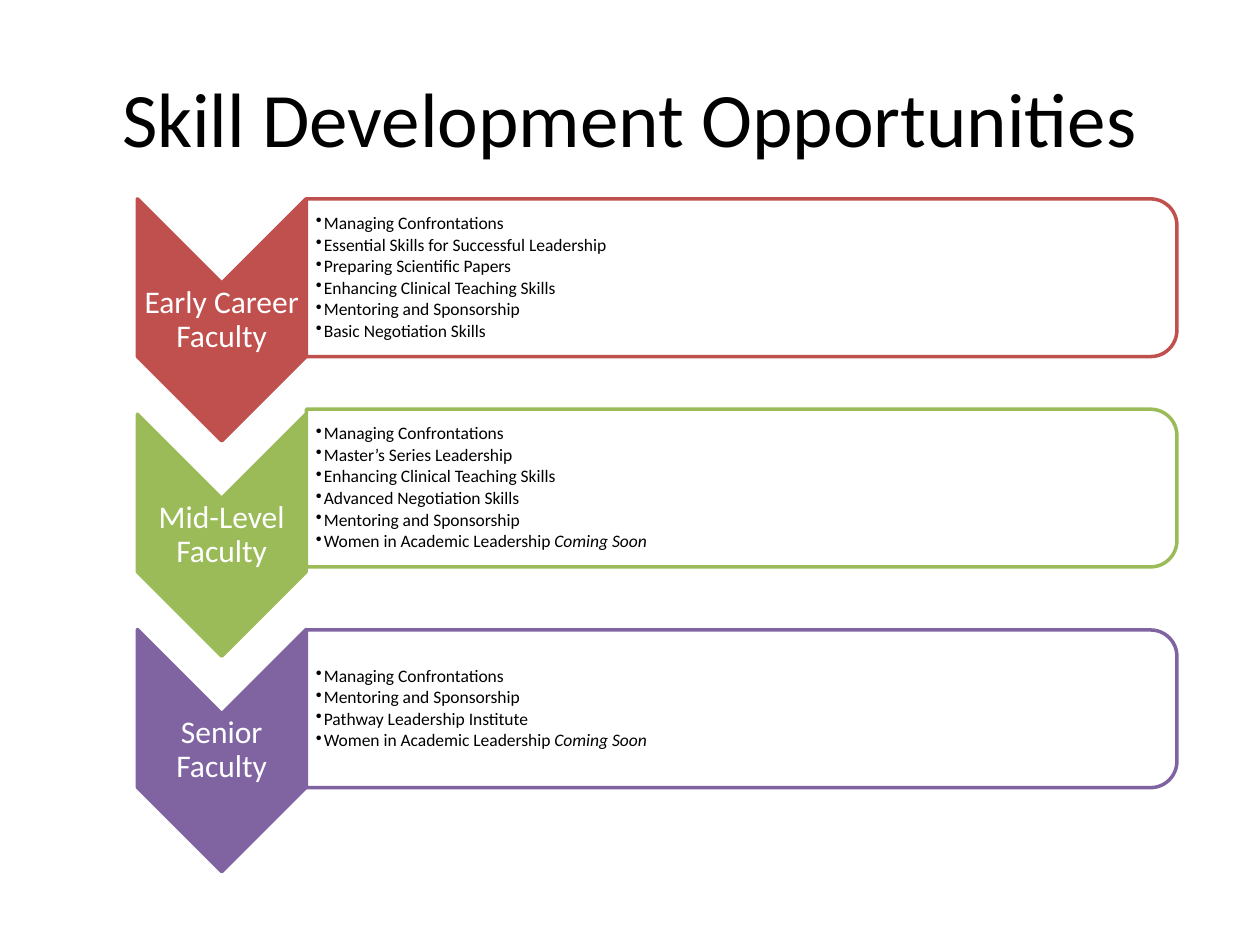
from lxml import etree
from pptx import Presentation
from pptx import util as u
from pptx.dml.color import RGBColor
from pptx.enum import shapes, text
from pptx.oxml.ns import qn

COLORS = {"early": "C0504D", "mid": "9BBB59", "senior": "8064A2",
          "panel": "FFFFFF", "label": "FFFFFF", "ink": "000000"}

SOON = "Coming Soon"
ACADEMIC = "Women in Academic Leadership "
# colour key, label, panel centre (cm), courses
STAGES = [
    ("early", "Early Career Faculty", 5.6,
     ["Managing Confrontations", "Essential Skills for Successful Leadership",
      "Preparing Scientific Papers", "Enhancing Clinical Teaching Skills",
      "Mentoring and Sponsorship", "Basic Negotiation Skills"]),
    ("mid", "Mid-Level Faculty", 9.84,
     ["Managing Confrontations", "Master’s Series Leadership",
      "Enhancing Clinical Teaching Skills", "Advanced Negotiation Skills",
      "Mentoring and Sponsorship", (ACADEMIC, SOON)]),
    ("senior", "Senior Faculty", 14.29,
     ["Managing Confrontations", "Mentoring and Sponsorship",
      "Pathway Leadership Institute", (ACADEMIC, SOON)]),
]
CHEVRON_X, CHEVRON_Y, CHEVRON_PITCH = 4.47, 6.45, 4.34
PANEL_X = 14.95


class SkillSlide:
    font = "Calibri"

    def __init__(self, deck):
        self.slide = deck.slides.add_slide(deck.slide_layouts[5])

    def color(self, key):
        return RGBColor.from_string(COLORS[key])

    def run(self, paragraph, words, size, color="ink", italic=None):
        run = paragraph.add_run()
        run.text = words
        run.font.name, run.font.size = self.font, u.Pt(size)
        run.font.color.rgb = self.color(color)
        run.font.italic = italic

    def title(self, words):
        heading = self.slide.shapes.title
        heading.left, heading.top = u.Cm(1.27), u.Cm(0.76)
        heading.width, heading.height = u.Cm(22.86), u.Cm(3.18)
        paragraph = heading.text_frame.paragraphs[0]
        paragraph.alignment = text.PP_ALIGN.CENTER
        self.run(paragraph, words, 44)

    def turned(self, preset, center, size, fill, line, opacity=100):
        """Add a preset turned a quarter clockwise about its centre."""
        (x, y), (width, height) = center, size
        shape = self.slide.shapes.add_shape(
            preset, u.Cm(x - width / 2), u.Cm(y - height / 2), u.Cm(width), u.Cm(height))
        shape.rotation = 90
        shape.shadow.inherit = False
        shape.fill.solid()
        shape.fill.fore_color.rgb = self.color(fill)
        if opacity < 100:
            tint = shape.fill._xPr.find(qn("a:solidFill"))[0]
            etree.SubElement(tint, qn("a:alpha"), val=str(opacity * 1000))
        shape.line.color.rgb = self.color(line)
        shape.line.width = u.Pt(2)

    def frame(self, left, middle, width, height, inset=0.03):
        box = self.slide.shapes.add_textbox(
            u.Cm(left), u.Cm(middle - height / 2), u.Cm(width), u.Cm(height))
        frame = box.text_frame
        frame.word_wrap = True
        frame.vertical_anchor = text.MSO_ANCHOR.MIDDLE
        frame.margin_left = u.Cm(inset)
        frame.margin_top = frame.margin_right = frame.margin_bottom = u.Cm(0.03)
        return frame

    def chevron(self, stage, label, middle):
        self.turned(shapes.MSO_SHAPE.CHEVRON, (CHEVRON_X, middle), (4.88, 3.4), stage, stage)
        paragraph = self.frame(CHEVRON_X - 1.7, middle, 3.4, 1.45).paragraphs[0]
        paragraph.alignment = text.PP_ALIGN.CENTER
        paragraph.line_spacing = 0.9
        self.run(paragraph, label, 18, "label")

    def panel(self, stage, courses, middle):
        self.turned(shapes.MSO_SHAPE.ROUND_2_SAME_RECTANGLE, (PANEL_X, middle),
                    (3.18, 17.55), "panel", stage, opacity=90)
        frame = self.frame(6.17, middle, 17.4, 2.84, inset=0.2)
        for index, course in enumerate(courses):
            paragraph = frame.add_paragraph() if index else frame.paragraphs[0]
            self.bullet(paragraph)
            name, note = course if isinstance(course, tuple) else (course, None)
            self.run(paragraph, name, 10)
            if note:
                self.run(paragraph, note, 10, italic=True)

    def bullet(self, paragraph):
        properties = paragraph._p.get_or_add_pPr()
        properties.set("marL", str(u.Cm(0.16)))
        properties.set("indent", str(u.Cm(-0.16)))
        etree.SubElement(properties, qn("a:buChar"), char="•")
        paragraph.level = 1
        paragraph.line_spacing = 0.9
        paragraph.space_after = u.Pt(1.5)


def main():
    deck = Presentation()
    deck.slide_width, deck.slide_height = u.Cm(25.4), u.Cm(19.05)
    page = SkillSlide(deck)
    page.title("Skill Development Opportunities")
    for index, (stage, label, panel_middle, courses) in enumerate(STAGES):
        page.chevron(stage, label, CHEVRON_Y + index * CHEVRON_PITCH)
        page.panel(stage, courses, panel_middle)
    deck.save("out.pptx")


if __name__ == "__main__":
    main()
